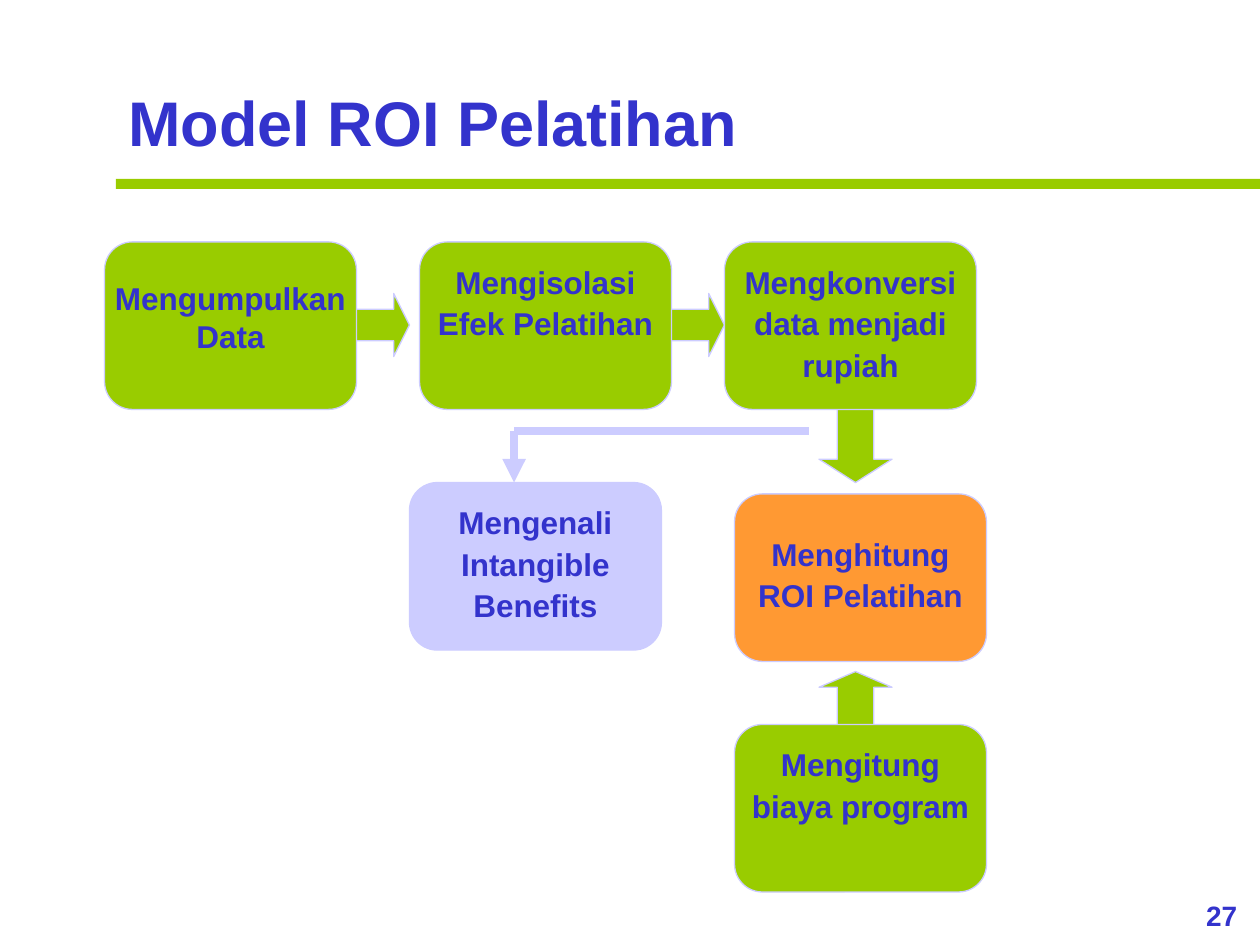
from pptx import Presentation
from pptx.dml.color import RGBColor
from pptx.enum.shapes import MSO_CONNECTOR as CONN, MSO_SHAPE as SHAPE
from pptx.enum.text import MSO_ANCHOR as ANCHOR, PP_ALIGN as ALIGN
from pptx.oxml.ns import qn
from pptx.util import Inches, Pt
from lxml.etree import SubElement

COLORS = {"text": "3333CC", "green": "99CC00", "lilac": "CCCCFF", "orange": "FF9933"}


def add_block(kind, x, y, w, h, color, line="lilac"):
    sp = s.shapes.add_shape(kind, Inches(x), Inches(y), Inches(w), Inches(h))
    sp.shadow.inherit = False
    sp.fill.solid()
    sp.fill.fore_color.rgb = RGBColor.from_string(COLORS[color])
    sp.line.color.rgb = RGBColor.from_string(COLORS[line])
    sp.line.width = Pt(0.75)
    return sp


def add_text(p, text, size, align, spacing=1.0):
    p.alignment = align
    p.line_spacing = spacing
    r = p.add_run()
    r.text = text
    r.font.name = "Arial"
    r.font.size = Pt(size)
    r.font.bold = True
    r.font.color.rgb = RGBColor.from_string(COLORS["text"])


prs = Presentation()
prs.slide_width, prs.slide_height = Inches(10), Inches(7.5)
s = prs.slides.add_slide(prs.slide_layouts[5])

title = s.shapes.title
title.left, title.top, title.width, title.height = Inches(0.92), Inches(0.55), Inches(8), Inches(0.76)
tf = title.text_frame
tf.vertical_anchor = ANCHOR.TOP
add_text(tf.paragraphs[0], "Model ROI Pelatihan", 36, ALIGN.LEFT, 1.1)

rule = add_block(SHAPE.RECTANGLE, 0.92, 1.42, 9.08, 0.08, "green")
rule.line.fill.background()

arrows = [
    (SHAPE.DOWN_ARROW, 6.5, 3.08, 0.58, 0.75, 0.32),
    (SHAPE.UP_ARROW, 6.5, 5.33, 0.58, 0.5, 0.25),
    (SHAPE.RIGHT_ARROW, 5.25, 2.33, 0.5, 0.5, 0.25),
    (SHAPE.RIGHT_ARROW, 2.75, 2.33, 0.5, 0.5, 0.25),
]
for kind, x, y, w, h, head in arrows:
    arrow = add_block(kind, x, y, w, h, "green")
    arrow.adjustments[0] = 0.5
    arrow.adjustments[1] = head

steps = [
    (0.83, 1.92, "green", 0.23, 1.0, ["Mengumpulkan", "Data"]),
    (3.33, 1.92, "green", 0.07, 1.1, ["Mengisolasi", "Efek Pelatihan"]),
    (5.75, 1.92, "green", 0.07, 1.1, ["Mengkonversi data menjadi rupiah"]),
    (5.83, 3.92, "orange", 0.23, 1.1, ["Menghitung ROI Pelatihan"]),
    (5.83, 5.75, "green", 0.07, 1.1, ["Mengitung biaya program"]),
    (3.25, 3.83, "lilac", 0.07, 1.1, ["Mengenali Intangible Benefits"]),
]
for x, y, color, top, spacing, lines in steps:
    step = add_block(SHAPE.ROUNDED_RECTANGLE, x, y, 2, 1.33, color)
    tf = step.text_frame
    tf.word_wrap = True
    tf.vertical_anchor = ANCHOR.TOP
    tf.margin_left = tf.margin_right = tf.margin_bottom = 0
    tf.margin_top = Inches(top)
    for i, text in enumerate(lines):
        p = tf.add_paragraph() if i else tf.paragraphs[0]
        add_text(p, text, 18, ALIGN.CENTER, spacing)

for x, y, arrowhead in [(6.42, 3.42, False), (4.08, 3.83, True)]:
    line = s.shapes.add_connector(CONN.STRAIGHT, Inches(4.08), Inches(3.42), Inches(x), Inches(y))
    line.line.color.rgb = RGBColor.from_string(COLORS["lilac"])
    line.line.width = Pt(4.5)
    if arrowhead:
        SubElement(line.line._get_or_add_ln(), qn("a:tailEnd"), type="triangle")
    SubElement(line._element.spPr, qn("a:effectLst"))

number = s.shapes.add_textbox(Inches(9.39), Inches(7.08), Inches(0.61), Inches(0.37))
tf = number.text_frame
tf.word_wrap = True
add_text(tf.paragraphs[0], "27", 16, ALIGN.CENTER)

prs.save("out.pptx")
